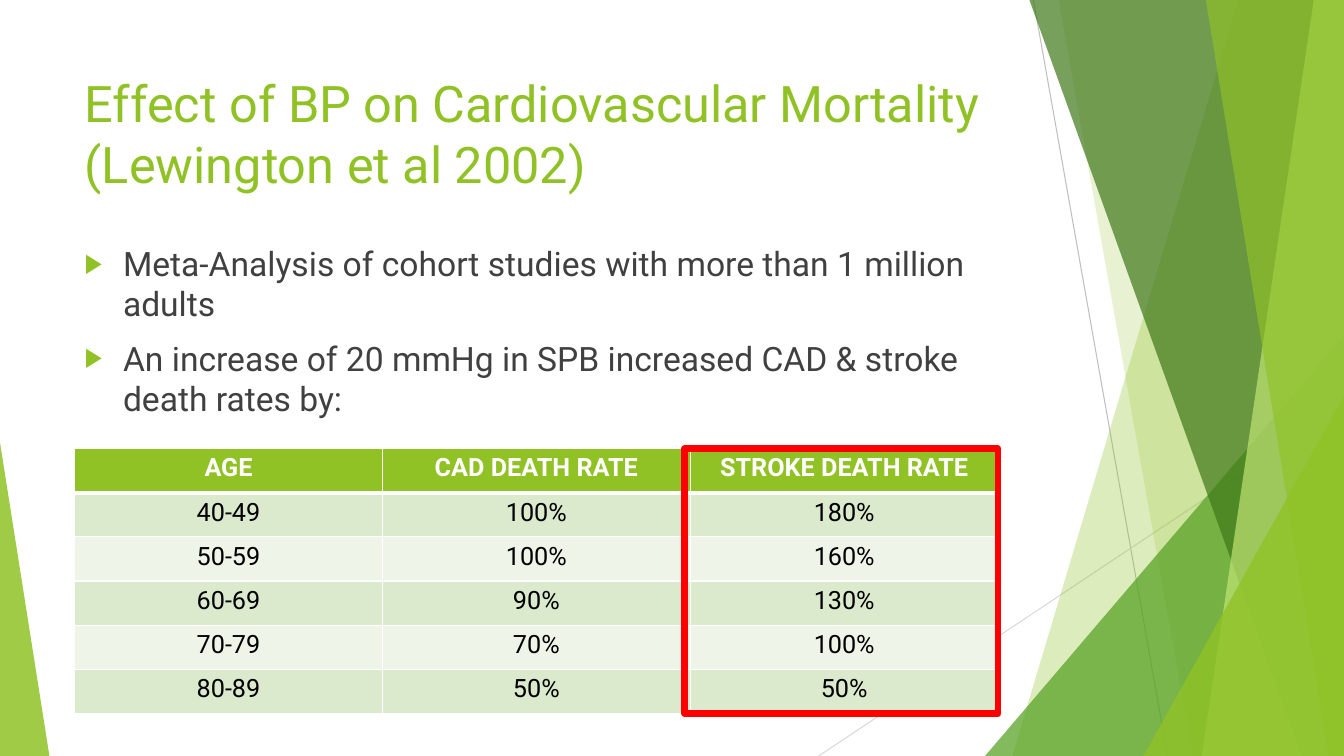
"""Build the slide on blood pressure and cardiovascular mortality."""
from dataclasses import dataclass

from lxml import etree
from pptx import Presentation
from pptx.dml.color import RGBColor
from pptx.enum.shapes import MSO_CONNECTOR, MSO_SHAPE
from pptx.enum.text import MSO_ANCHOR, MSO_AUTO_SIZE, PP_ALIGN
from pptx.oxml.ns import qn
from pptx.util import Inches, Pt

STRAIGHT = MSO_CONNECTOR.STRAIGHT
TRIANGLE = MSO_SHAPE.ISOSCELES_TRIANGLE
RECTANGLE = MSO_SHAPE.RECTANGLE
TOP = MSO_ANCHOR.TOP
LEFT = PP_ALIGN.LEFT
CENTER = PP_ALIGN.CENTER
NO_AUTOFIT = MSO_AUTO_SIZE.NONE

TITLE = "Effect of BP on Cardiovascular Mortality (Lewington et al 2002)"
BULLETS = [
    "Meta-Analysis of cohort studies with more than 1 million adults",
    "An increase of 20 mmHg in SPB increased CAD & stroke death rates by:",
]
DEATH_RATES = [
    ("AGE", "CAD DEATH RATE", "STROKE DEATH RATE"),
    ("40-49", "100%", "180%"),
    ("50-59", "100%", "160%"),
    ("60-69", "90%", "130%"),
    ("70-79", "70%", "100%"),
    ("80-89", "50%", "50%"),
]


@dataclass(frozen=True)
class Theme:
    """Colours, font and type sizes."""
    font: str = "Roboto"
    green: str = "90C226"
    mid_green: str = "54A021"
    dark_green: str = "3F7819"
    light_green: str = "C0E474"
    body: str = "404040"
    black: str = "000000"
    white: str = "FFFFFF"
    bands: tuple = ("EEF4E8", "DBE9CD")
    dark_line: str = "BFBFBF"
    light_line: str = "D9D9D9"
    highlight: str = "FF0000"
    title_size: int = 36
    body_size: int = 24
    table_size: int = 18


THEME = Theme()
WIDTH, HEIGHT = 13.33, 7.5
MARGIN = 0.74
TEXT_WIDTH = 9.4
TABLE_TOP, TABLE_WIDTH, TABLE_HEIGHT = 4.45, 9.16, 2.63
HIGHLIGHT_WIDTH = 3.11

LINES = [
    ((10.25, 0), (11.58, HEIGHT), THEME.dark_line),
    ((WIDTH, 4.03), (8.12, HEIGHT), THEME.light_line),
]
FACETS = [
    ("band", 12.28, 10.04, THEME.green, 30),
    ("band", 10.5, 11.83, THEME.green, 20),
    ("right corner", 3.56, 4.17, THEME.mid_green, 72),
    ("band", 10.21, 12.91, THEME.dark_green, 70),
    ("band", 13.03, 11.92, THEME.light_green, 70),
    ("band", 11.96, 13.18, THEME.green, 65),
    ("right corner", 1.99, 3.57, THEME.green, 80),
    ("left corner", 0.49, 3.11, THEME.green, 85),
]


def rgb(color):
    return RGBColor.from_string(color)


def style_font(font, size, color, bold=False):
    values = {"name": THEME.font, "size": Pt(size), "bold": bold}
    for name, value in values.items():
        setattr(font, name, value)
    font.color.rgb = rgb(color)


def add_background_line(slide, start, end, color):
    ends = [Inches(value) for value in (*start, *end)]
    connector = slide.shapes.add_connector(STRAIGHT, *ends)
    connector.line.width = Pt(0.75)
    connector.line.color.rgb = rgb(color)
    etree.SubElement(connector._element.spPr, qn("a:effectLst"))


def add_band(slide, top_x, bottom_x):
    builder = slide.shapes.build_freeform(Inches(top_x), 0)
    corners = [(WIDTH, 0), (WIDTH, HEIGHT), (bottom_x, HEIGHT)]
    builder.add_line_segments([(Inches(x), Inches(y)) for x, y in corners])
    return builder.convert_to_shape()


def add_corner(slide, kind, width, height):
    on_right = kind == "right corner"
    left = WIDTH - width if on_right else 0
    box = [Inches(value) for value in (left, HEIGHT - height, width, height)]
    shape = slide.shapes.add_shape(TRIANGLE, *box)
    shape.adjustments[0] = 1 if on_right else 0
    return shape


def add_facet(slide, kind, first, second, color, opacity):
    if kind == "band":
        shape = add_band(slide, first, second)
    else:
        shape = add_corner(slide, kind, first, second)
    shape.shadow.inherit = False
    shape.line.fill.background()
    shape.fill.solid()
    shape.fill.fore_color.rgb = rgb(color)
    color_element = shape._element.spPr.find(qn("a:solidFill"))[0]
    etree.SubElement(color_element, qn("a:alpha"), val=str(opacity * 1000))


def place_text(slide, shape, top, height, texts, size, color):
    slide.shapes._spTree.append(shape._element)
    box = {"left": MARGIN, "top": top, "width": TEXT_WIDTH, "height": height}
    for name, value in box.items():
        setattr(shape, name, Inches(value))
    frame = shape.text_frame
    frame.text = "\n".join(texts)
    values = {"word_wrap": True, "auto_size": NO_AUTOFIT, "vertical_anchor": TOP}
    for name, value in values.items():
        setattr(frame, name, value)
    for index, paragraph in enumerate(frame.paragraphs):
        paragraph.alignment = LEFT
        paragraph.space_before = Pt(10 if index else 0)
        style_font(paragraph.runs[0].font, size, color)


def add_bullet(paragraph):
    properties = paragraph._p.get_or_add_pPr()
    indent = Inches(0.38)
    properties.set("marL", str(indent))
    properties.set("indent", str(-indent))
    color = etree.SubElement(properties, qn("a:buClr"))
    etree.SubElement(color, qn("a:srgbClr"), val=THEME.green)
    etree.SubElement(properties, qn("a:buSzPct"), val="80000")
    etree.SubElement(properties, qn("a:buFont"), typeface=THEME.font)
    etree.SubElement(properties, qn("a:buChar"), char="▶")


def set_borders(cell, row):
    properties = cell._tc.get_or_add_tcPr()
    widths = {"L": 1, "R": 1, "T": 3 if row == 1 else 1, "B": 3 if row == 0 else 1}
    for index, (side, width) in enumerate(widths.items()):
        line = etree.Element(qn(f"a:ln{side}"), w=str(Pt(width)))
        fill = etree.SubElement(line, qn("a:solidFill"))
        etree.SubElement(fill, qn("a:srgbClr"), val=THEME.white)
        properties.insert(index, line)


def add_death_rate_table(slide):
    box = [Inches(v) for v in (MARGIN, TABLE_TOP, TABLE_WIDTH, TABLE_HEIGHT)]
    table = slide.shapes.add_table(len(DEATH_RATES), len(DEATH_RATES[0]), *box).table
    for row, values in enumerate(DEATH_RATES):
        header = row == 0
        for column, value in enumerate(values):
            cell = table.cell(row, column)
            cell.text = value
            cell.fill.solid()
            cell.fill.fore_color.rgb = rgb(THEME.green if header else THEME.bands[row % 2])
            set_borders(cell, row)
            paragraph = cell.text_frame.paragraphs[0]
            paragraph.alignment = CENTER
            color = THEME.white if header else THEME.black
            style_font(paragraph.runs[0].font, THEME.table_size, color, header)


def add_highlight(slide):
    left = MARGIN + TABLE_WIDTH - HIGHLIGHT_WIDTH
    box = [Inches(v) for v in (left, TABLE_TOP, HIGHLIGHT_WIDTH, TABLE_HEIGHT)]
    shape = slide.shapes.add_shape(RECTANGLE, *box)
    shape.shadow.inherit = False
    shape.fill.background()
    shape.line.width = Pt(4.5)
    shape.line.color.rgb = rgb(THEME.highlight)
    etree.SubElement(shape._element.spPr.find(qn("a:ln")), qn("a:round"))


def main():
    presentation = Presentation()
    presentation.slide_width = Inches(WIDTH)
    presentation.slide_height = Inches(HEIGHT)
    slide = presentation.slides.add_slide(presentation.slide_layouts[1])
    title, body = slide.placeholders
    for line in LINES:
        add_background_line(slide, *line)
    for facet in FACETS:
        add_facet(slide, *facet)
    place_text(slide, title, 0.67, 1.44, [TITLE], THEME.title_size, THEME.green)
    place_text(slide, body, 2.36, 4.24, BULLETS, THEME.body_size, THEME.body)
    for paragraph in body.text_frame.paragraphs:
        add_bullet(paragraph)
    add_death_rate_table(slide)
    add_highlight(slide)
    presentation.save("out.pptx")


if __name__ == "__main__":
    main()
